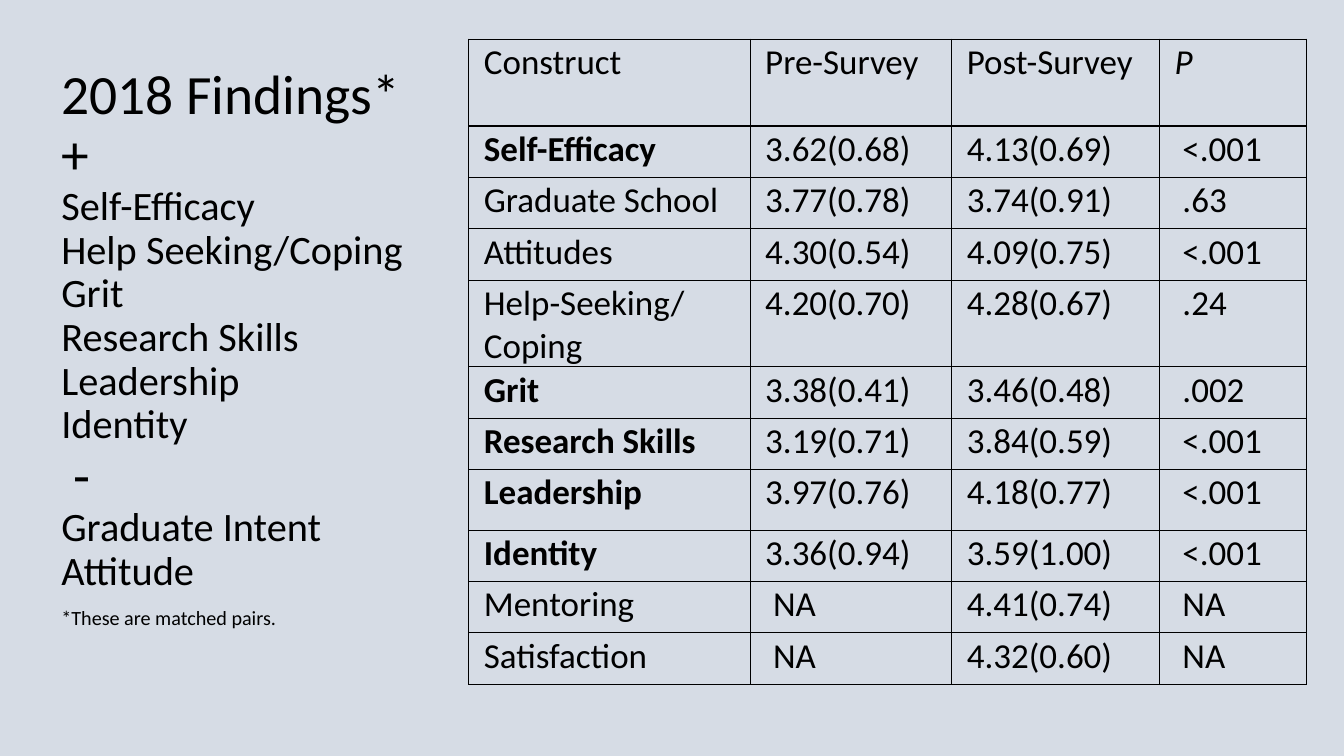
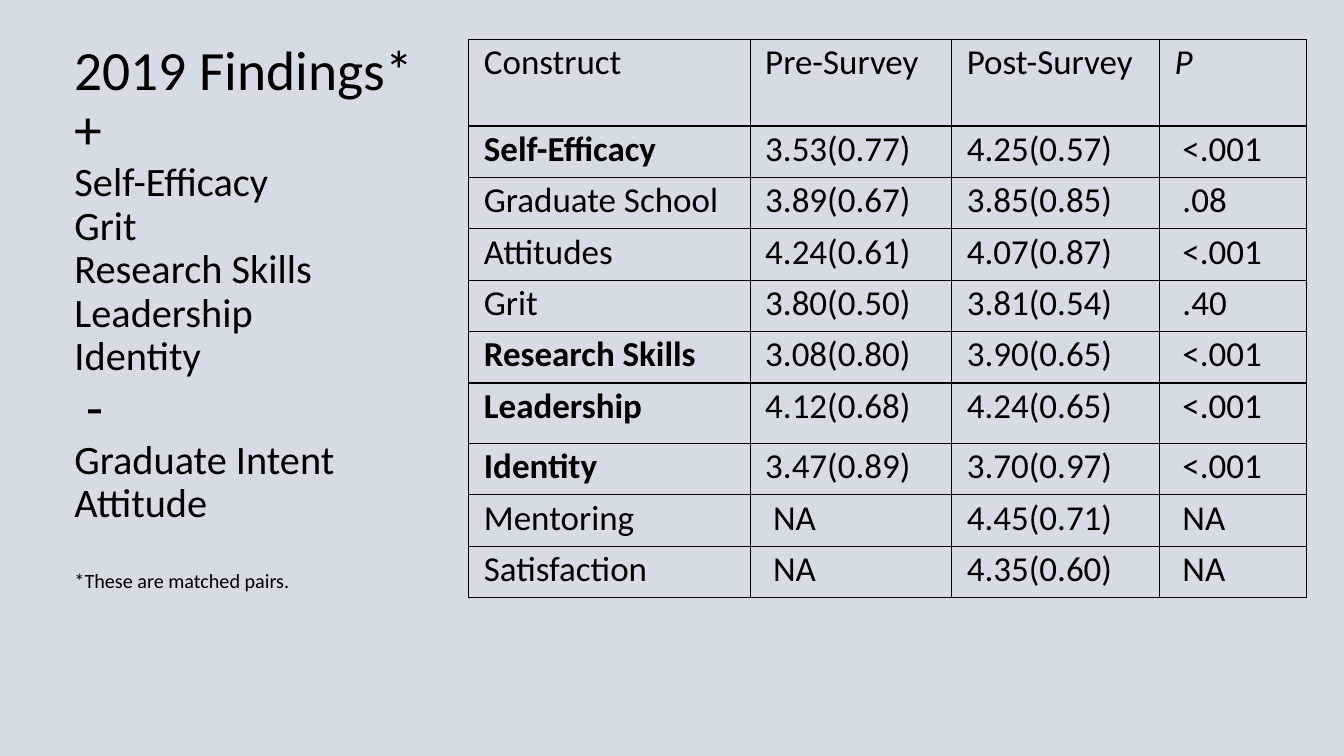
from pptx import Presentation
from pptx.dml.color import RGBColor
from pptx.enum.text import MSO_ANCHOR
from pptx.oxml import parse_xml
from pptx.oxml.ns import nsdecls
from pptx.util import Inches, Pt

BACKDROP = RGBColor(0xD6, 0xDC, 0xE5)
INK = RGBColor(0x00, 0x00, 0x00)
FONT = "Calibri"
HEADING_SIZE, ITEM_SIZE, NOTE_SIZE, CELL_SIZE = 39.6, 28.8, 14.4, 25

HEADER = ("Construct", "Pre-Survey", "Post-Survey", "P")
COLUMN_WIDTHS = (2.79, 2, 2.06, 1.46)
ROW_HEIGHT = 0.51
SPECIAL_HEIGHTS = {"Construct": 0.86, "Help-Seeking/Coping": 0.86, "Leadership": 0.6}
TABLE_LEFT, TABLE_TOP = 4.65, 0.39
CELL_MARGINS = {"margin_left": 0.15, "margin_top": 0.02, "margin_right": 0.15, "margin_bottom": 0}
DECLINES = ["Graduate Intent", "Attitude"]
NOTE = "*These are matched pairs."

FINDINGS = [
    {
        "title": "2018 Findings*",
        "place": (0.51, 0.61, 3.72, 5.9),
        "gains": ["Self-Efficacy", "Help Seeking/Coping", "Grit", "Research Skills", "Leadership", "Identity"],
        "note_gap": 10,
        "bold": {"Self-Efficacy", "Grit", "Research Skills", "Leadership", "Identity"},
        "rows": [
            ("Self-Efficacy", "3.62(0.68)", "4.13(0.69)", " <.001"),
            ("Graduate School", "3.77(0.78)", "3.74(0.91)", " .63"),
            ("Attitudes", "4.30(0.54)", "4.09(0.75)", " <.001"),
            ("Help-Seeking/Coping", "4.20(0.70)", "4.28(0.67)", " .24"),
            ("Grit", "3.38(0.41)", "3.46(0.48)", " .002"),
            ("Research Skills", "3.19(0.71)", "3.84(0.59)", " <.001"),
            ("Leadership", "3.97(0.76)", "4.18(0.77)", " <.001"),
            ("Identity", "3.36(0.94)", "3.59(1.00)", " <.001"),
            ("Mentoring", " NA", "4.41(0.74)", " NA"),
            ("Satisfaction", " NA", "4.32(0.60)", " NA"),
        ],
    },
    {
        "title": "2019 Findings*",
        "place": (0.64, 0.37, 3.78, 5.9),
        "gains": ["Self-Efficacy", "Grit", "Research Skills", "Leadership", "Identity"],
        "note_gap": 32,
        "bold": {"Self-Efficacy", "Research Skills", "Leadership", "Identity"},
        "rows": [
            ("Self-Efficacy", "3.53(0.77)", "4.25(0.57)", " <.001"),
            ("Graduate School", "3.89(0.67)", "3.85(0.85)", " .08"),
            ("Attitudes", "4.24(0.61)", "4.07(0.87)", " <.001"),
            ("Grit", "3.80(0.50)", "3.81(0.54)", " .40"),
            ("Research Skills", "3.08(0.80)", "3.90(0.65)", " <.001"),
            ("Leadership", "4.12(0.68)", "4.24(0.65)", " <.001"),
            ("Identity", "3.47(0.89)", "3.70(0.97)", " <.001"),
            ("Mentoring", " NA", "4.45(0.71)", " NA"),
            ("Satisfaction", " NA", "4.35(0.60)", " NA"),
        ],
    },
]


def set_values(target, values):
    for name, value in values.items():
        setattr(target, name, value)


def write(para, text, size, **style):
    span = para.add_run()
    span.text = text
    set_values(span.font, {"name": FONT, "size": Pt(size), **style})
    span.font.color.rgb = INK


def add_summary(page, finding):
    box = page.shapes.add_textbox(*map(Inches, finding["place"]))
    frame = box.text_frame
    set_values(frame, {"word_wrap": True, "vertical_anchor": MSO_ANCHOR.TOP})
    lines = [(finding["title"], HEADING_SIZE), ("+", HEADING_SIZE)]
    lines += [(gain, ITEM_SIZE) for gain in finding["gains"]]
    lines += [(" -", HEADING_SIZE)]
    lines += [(decline, ITEM_SIZE) for decline in DECLINES]
    lines += [(NOTE, NOTE_SIZE)]
    for index, (text, size) in enumerate(lines):
        para = frame.add_paragraph() if index else frame.paragraphs[0]
        para.line_spacing = 0.9
        write(para, text, size)
    para.space_before = Pt(finding["note_gap"])


def add_borders(cell):
    properties = cell._tc.get_or_add_tcPr()
    for index, side in enumerate(("lnL", "lnR", "lnT", "lnB")):
        properties.insert(index, parse_xml(
            f'<a:{side} {nsdecls("a")} w="{Pt(1)}"><a:solidFill>'
            f'<a:srgbClr val="{INK}"/></a:solidFill></a:{side}>'))


def add_results(page, finding):
    rows = [HEADER] + finding["rows"]
    heights = [SPECIAL_HEIGHTS.get(row[0], ROW_HEIGHT) for row in rows]
    place = (TABLE_LEFT, TABLE_TOP, sum(COLUMN_WIDTHS), sum(heights))
    table = page.shapes.add_table(len(rows), len(HEADER), *map(Inches, place)).table
    set_values(table, {"first_row": False, "horz_banding": False})
    for column, width in zip(table.columns, COLUMN_WIDTHS):
        column.width = Inches(width)
    for line, row, height in zip(table.rows, rows, heights):
        line.height = Inches(height)
        for cell, text in zip(line.cells, row):
            set_values(cell, {side: Inches(gap) for side, gap in CELL_MARGINS.items()})
            cell.fill.background()
            add_borders(cell)
            write(cell.text_frame.paragraphs[0], text, CELL_SIZE,
                  bold=text in finding["bold"], italic=text == "P")


def main():
    deck = Presentation()
    set_values(deck, {"slide_width": Inches(13.33), "slide_height": Inches(7.5)})
    fill = deck.slide_master.background.fill
    fill.solid()
    fill.fore_color.rgb = BACKDROP
    for finding in FINDINGS:
        page = deck.slides.add_slide(deck.slide_layouts[6])
        add_summary(page, finding)
        add_results(page, finding)
    deck.save("out.pptx")


if __name__ == "__main__":
    main()
